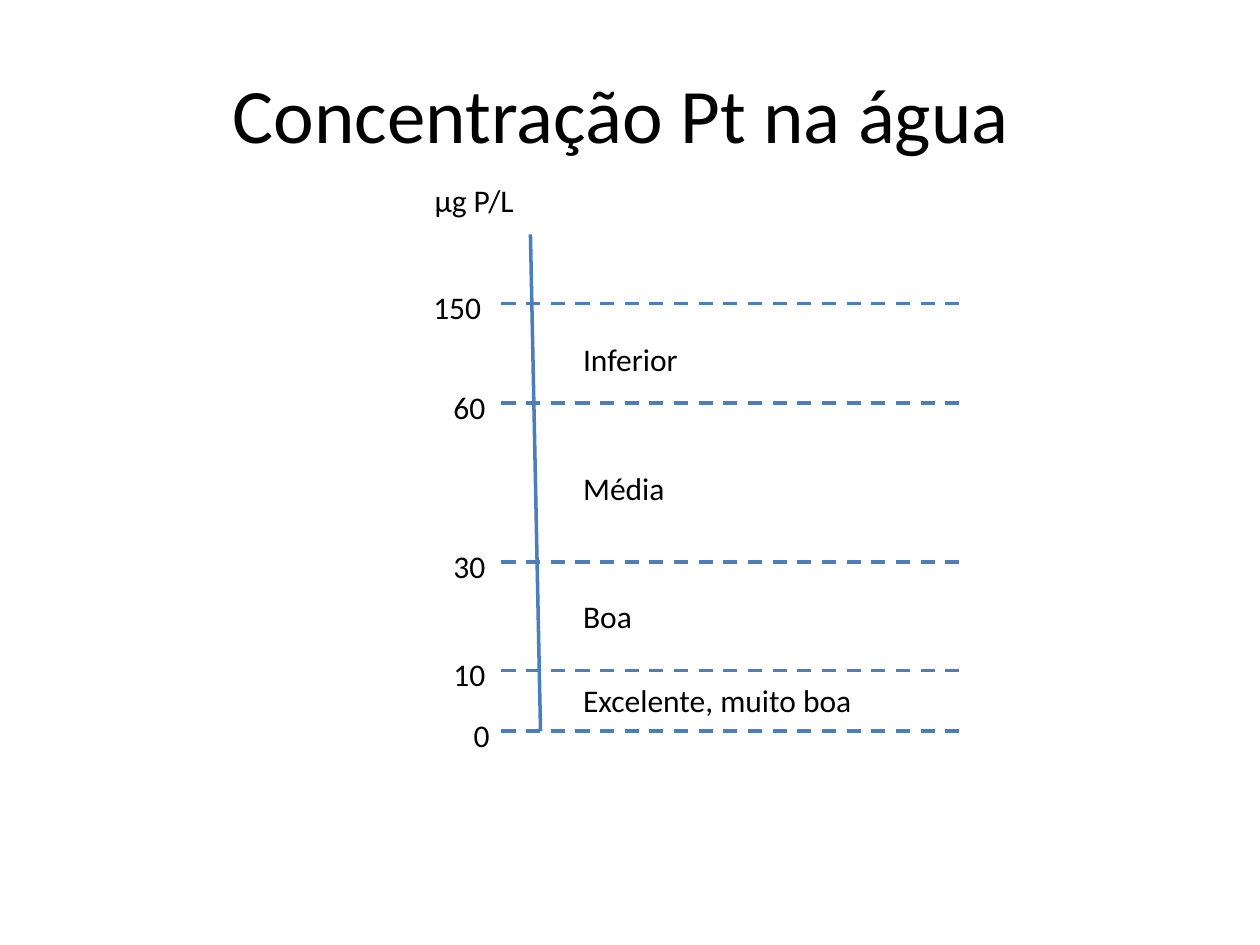
from pptx import Presentation
from pptx.dml.color import RGBColor
from pptx.enum.dml import MSO_LINE
from pptx.enum.shapes import MSO_CONNECTOR
from pptx.enum.text import MSO_ANCHOR, PP_ALIGN
from pptx.oxml.ns import qn
from pptx.util import Inches, Pt
from lxml.etree import SubElement

BLACK = RGBColor(0x00, 0x00, 0x00)
BLUE = RGBColor(0x4B, 0x7E, 0xBC)
FONT = "Calibri"
LABEL_HEIGHT = 0.4

LEVELS = [("150", 1.02, 0.71), ("60", 1.81, 0.55), ("30", 3.07, 0.55),
          ("10", 3.93, 0.55), ("0", 4.41, 0.39)]
CLASSES = [("Inferior", 1.26), ("Média", 2.28), ("Boa", 3.3),
           ("Excelente, muito boa", 3.97)]


def add_text(shapes, text, left, top, width, height, size=18):
    """Add a one-paragraph text box and return it."""
    box = shapes.add_textbox(Inches(left), Inches(top), Inches(width), Inches(height))
    box.text_frame.word_wrap = True
    paragraph = box.text_frame.paragraphs[0]
    paragraph.text = text
    paragraph.font.name = FONT
    paragraph.font.size = Pt(size)
    paragraph.font.color.rgb = BLACK
    return box


def add_line(shapes, start, end, dash=None):
    """Add a flat blue line between two points."""
    line = shapes.add_connector(MSO_CONNECTOR.STRAIGHT, *map(Inches, start + end))
    line.line.color.rgb = BLUE
    line.line.width = Pt(2)
    if dash:
        line.line.dash_style = dash
    SubElement(line._element.spPr, qn("a:effectLst"))


def add_title(slide, left, top, width, height):
    """Add the centred slide title."""
    title = add_text(slide.shapes, "Concentração Pt na água", left, top, width, height, 44)
    title.text_frame.vertical_anchor = MSO_ANCHOR.MIDDLE
    title.text_frame.paragraphs[0].alignment = PP_ALIGN.CENTER


def add_scale(slide, left, top, width, height):
    """Add the concentration axis with its limits and quality classes."""
    shapes = slide.shapes.add_group_shape().shapes
    bottom = top + height
    add_line(shapes, (left + 0.86, top + 0.47), (left + 0.94, bottom))
    for value, offset, label_width in LEVELS:
        level = top + offset
        add_line(shapes, (left + 0.63, level), (left + 4.33, level), MSO_LINE.DASH)
        add_text(shapes, value, left + 0.7 - label_width, level - 0.17,
                 label_width, LABEL_HEIGHT)
    add_text(shapes, "µg P/L", left, top, 1.42, LABEL_HEIGHT)
    for name, offset in CLASSES:
        add_text(shapes, name, left + 1.18, top + offset, width - 1.18, LABEL_HEIGHT)


def main():
    """Build and save the slide."""
    presentation = Presentation()
    presentation.slide_width = Inches(10)
    presentation.slide_height = Inches(7.5)
    slide = presentation.slides.add_slide(presentation.slide_layouts[6])
    add_title(slide, 0.43, 0.27, 9, 1.25)
    add_scale(slide, 3.35, 1.39, 5.04, 4.41)
    presentation.save("out.pptx")


if __name__ == "__main__":
    main()
